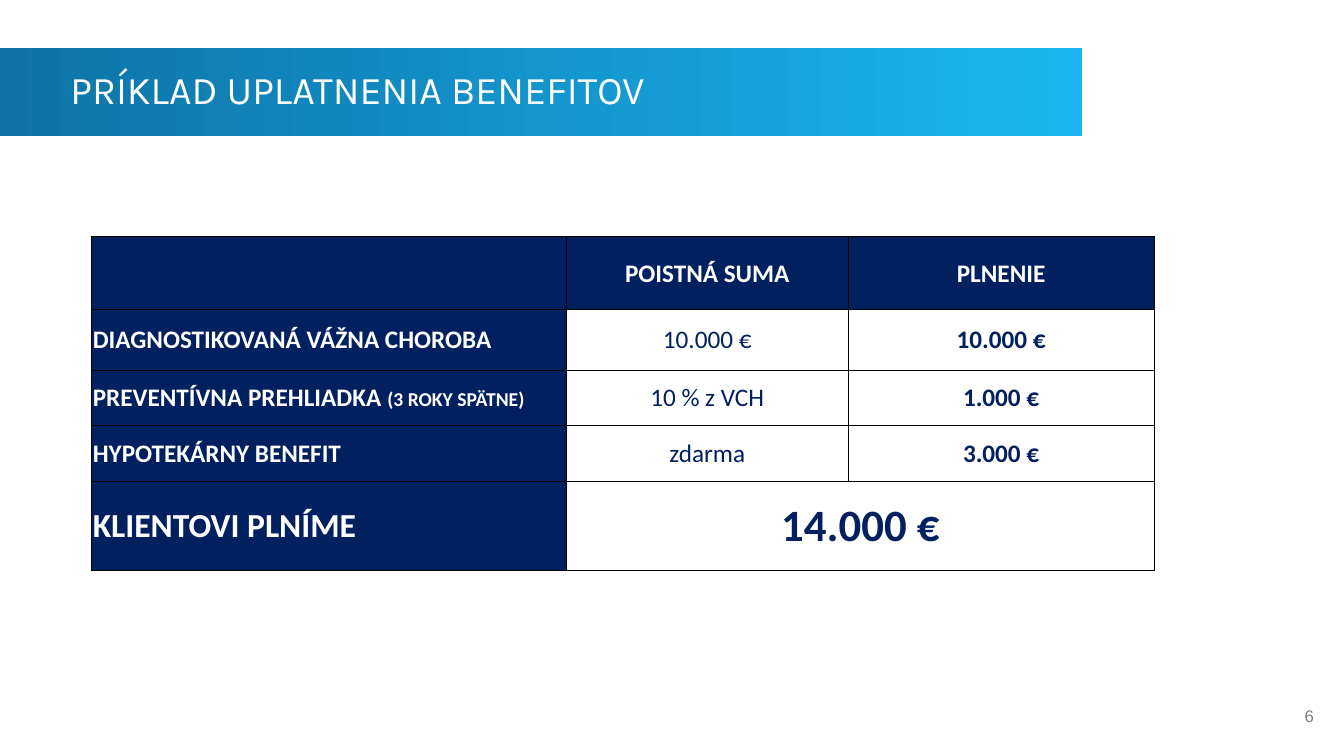
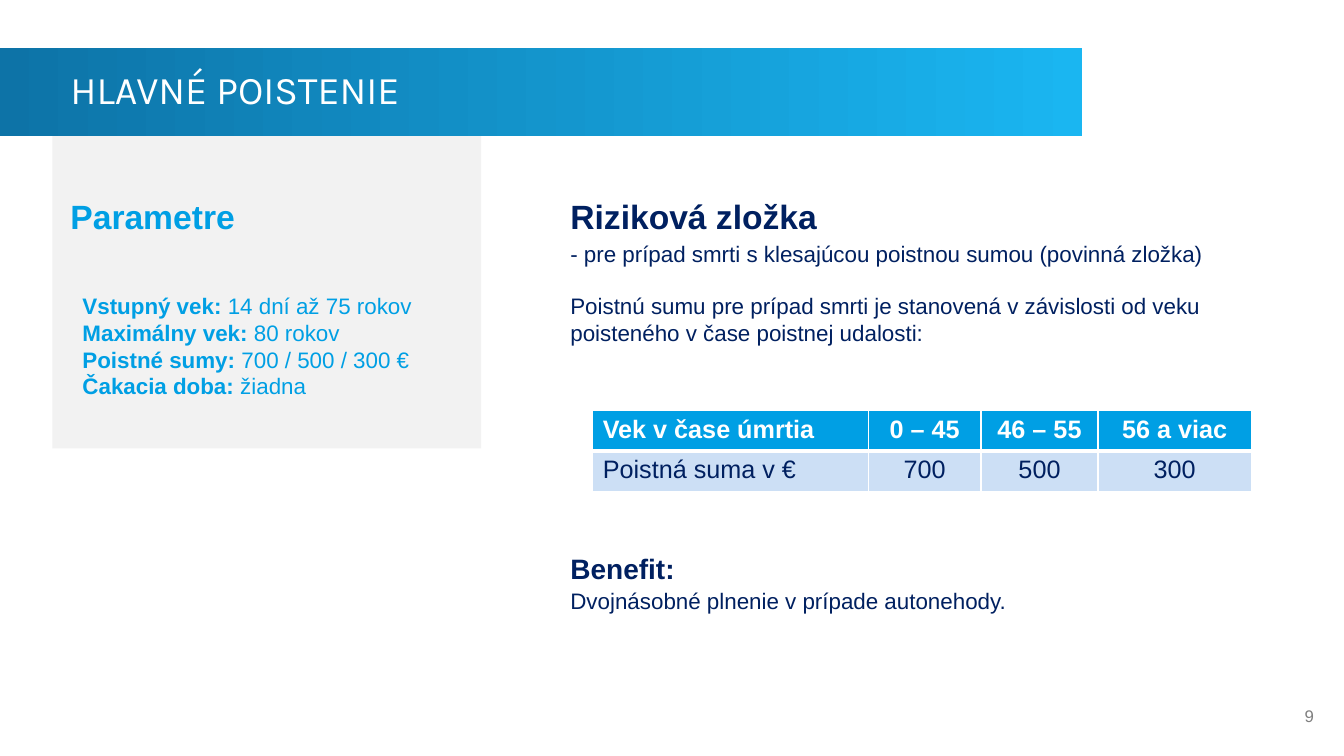
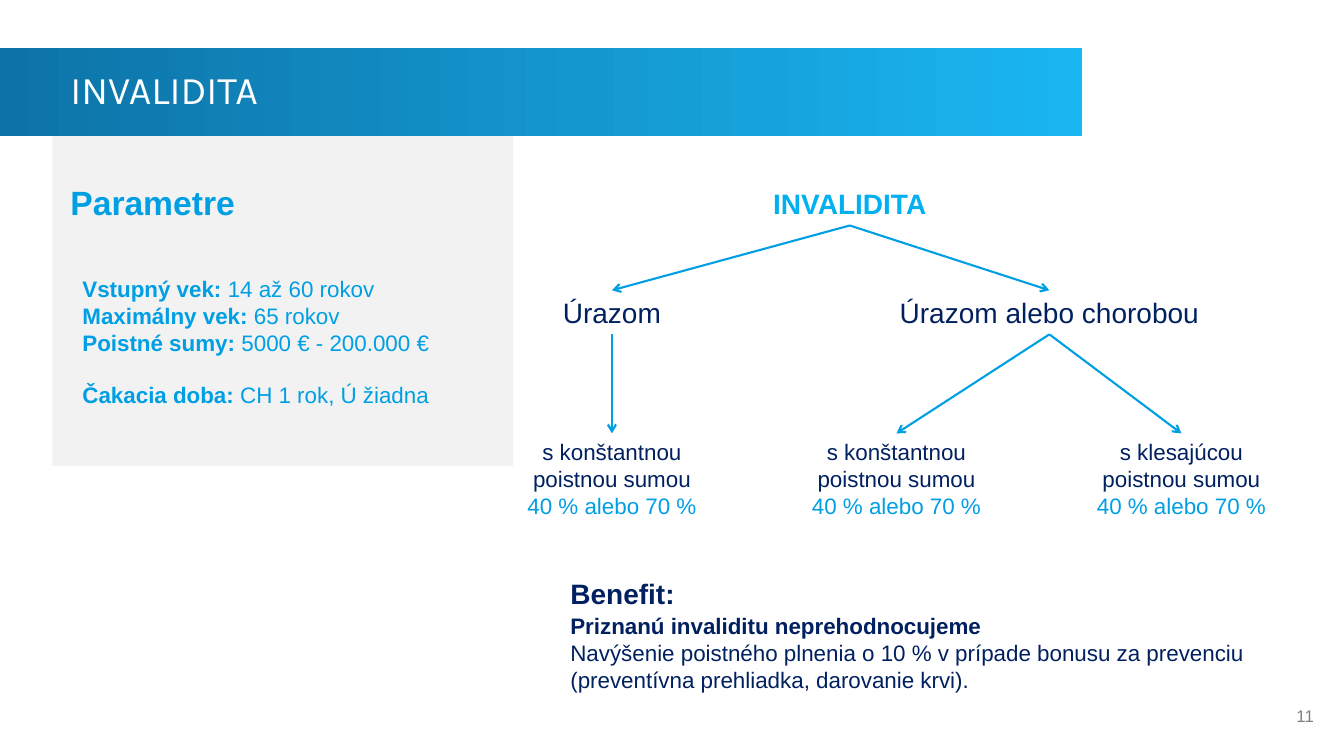
"""Build three slides on insurance benefits, main cover and disability."""
from dataclasses import dataclass
from typing import Optional

from pptx import Presentation
from pptx import util as u
from pptx.dml.color import RGBColor
from pptx.enum import shapes, text
from pptx.oxml import parse_xml
from pptx.oxml.ns import nsdecls, qn

WHITE = RGBColor(0xFF, 0xFF, 0xFF)
BLACK = RGBColor(0x00, 0x00, 0x00)
NAVY = RGBColor(0x00, 0x20, 0x60)
BLUE = RGBColor(0x00, 0x9F, 0xE4)
BRIGHT = RGBColor(0x00, 0xB0, 0xF0)
PALE_BLUE = RGBColor(0xCC, 0xDF, 0xF5)
PANEL_GRAY = RGBColor(0xF2, 0xF2, 0xF2)
NUMBER_GRAY = RGBColor(0x80, 0x80, 0x80)
BAND_START = RGBColor(0x0D, 0x73, 0xA7)
BAND_END = RGBColor(0x1A, 0xB6, 0xF1)

WIDTH, HEIGHT = u.Inches(13.33), u.Inches(7.5)
LEFT, CENTER, RIGHT = text.PP_ALIGN.LEFT, text.PP_ALIGN.CENTER, text.PP_ALIGN.RIGHT
TOP, MIDDLE = text.MSO_ANCHOR.TOP, text.MSO_ANCHOR.MIDDLE
BLANK_LAYOUT = 6
BODY_SIZE = 16
BODY_LINE = 18.4
CONTENT_COL = 41.7
CONTENT_COLS = 56
HEADING_ROWS = 6
NODE_ROWS = 5.83


def across(columns: float) -> u.Emu:
    """Turn columns (hundredths of the slide width) into a length."""
    return u.Emu(round(WIDTH * columns / 100))


def down(rows: float) -> u.Emu:
    """Turn rows (hundredths of the slide height) into a length."""
    return u.Emu(round(HEIGHT * rows / 100))


@dataclass(frozen=True)
class Area:
    """A rectangle in grid columns and rows."""
    col: float
    row: float
    cols: float
    rows: float

    def place(self) -> tuple:
        """Return left, top, width and height."""
        return across(self.col), down(self.row), across(self.cols), down(self.rows)


@dataclass(frozen=True)
class Span:
    """A run of text with what sets it apart from its paragraph."""
    words: str
    bold: Optional[bool] = None
    size: Optional[float] = None


@dataclass(frozen=True)
class Para:
    """A paragraph with one common style."""
    spans: tuple
    size: float = BODY_SIZE
    color: RGBColor = NAVY
    bold: Optional[bool] = False
    align: text.PP_ALIGN = LEFT
    font: str = "Arial"
    before: float = 0
    spacing: float = 1.0


@dataclass(frozen=True)
class Cell:
    """A table cell with its paragraph and fill."""
    para: Optional[Para]
    fill: RGBColor


@dataclass(frozen=True)
class Grid:
    """A table with the line weight of every column and row edge."""
    area: Area
    cols: tuple
    rows: tuple
    cells: tuple
    col_edges: tuple
    row_edges: tuple
    edge_color: RGBColor
    insets: tuple


@dataclass(frozen=True)
class Node:
    """A tree label centred on a column, below its parent."""
    paras: tuple
    center: float
    row: float
    cols: float
    rows: float
    parent: Optional["Node"] = None


def plain(words: str, **style) -> Para:
    """Make a paragraph of one span."""
    return Para((Span(words),), **style)


def heading(words: str, size: float = 24, color: RGBColor = NAVY,
            font: str = "Arial", bold: bool = True) -> Para:
    """Make a heading paragraph."""
    return plain(words, size=size, color=color, bold=bold, font=font, before=10, spacing=0.9)


def parameter(label: str, value: str, before: float = 0) -> Para:
    """Make a paragraph with a bold label and its value."""
    return Para((Span(label + " ", True), Span(value, False)),
                color=BLUE, bold=None, before=before)


def write(frame, paras: tuple) -> None:
    """Fill a text frame with paragraphs."""
    for index, para in enumerate(paras):
        paragraph = frame.add_paragraph() if index else frame.paragraphs[0]
        paragraph.alignment = para.align
        paragraph.space_before = u.Pt(para.before)
        paragraph.line_spacing = para.spacing
        font = paragraph.font
        font.name, font.size, font.bold = para.font, u.Pt(para.size), para.bold
        font.color.rgb = para.color
        for span in para.spans:
            run = paragraph.add_run()
            run.text = span.words
            if span.bold is not None:
                run.font.bold = span.bold
            if span.size is not None:
                run.font.size = u.Pt(span.size)


def draw_text(page, area: Area, paras: tuple, anchor: text.MSO_ANCHOR = TOP) -> None:
    """Add a wrapped text box."""
    frame = page.shapes.add_textbox(*area.place()).text_frame
    frame.word_wrap = True
    frame.vertical_anchor = anchor
    write(frame, paras)


def draw_box(page, area: Area):
    """Add a rectangle without line or shadow."""
    box = page.shapes.add_shape(shapes.MSO_SHAPE.RECTANGLE, *area.place())
    box.shadow.inherit = False
    box.line.fill.background()
    return box


def draw_arrow(page, start: tuple, end: tuple) -> None:
    """Add an arrow between two grid points."""
    arrow = page.shapes.add_connector(
        shapes.MSO_CONNECTOR.STRAIGHT,
        across(start[0]), down(start[1]), across(end[0]), down(end[1]))
    arrow.line.color.rgb = BLUE
    arrow.line.width = u.Pt(1.5)
    properties = arrow.element.spPr
    properties.find(qn("a:ln")).append(parse_xml(f'<a:tailEnd {nsdecls("a")} type="arrow"/>'))
    properties.append(parse_xml(f'<a:effectLst {nsdecls("a")}/>'))


def draw_edges(cell, weights: dict, color: RGBColor) -> None:
    """Set the borders of a table cell."""
    properties = cell._tc.get_or_add_tcPr()
    for index, (side, weight) in enumerate(weights.items()):
        properties.insert(index, parse_xml(
            f'<a:ln{side} {nsdecls("a")} w="{u.Pt(weight)}"><a:solidFill>'
            f'<a:srgbClr val="{color}"/></a:solidFill></a:ln{side}>'))


def draw_table(page, grid: Grid):
    """Add a table and return it."""
    table = page.shapes.add_table(len(grid.rows), len(grid.cols), *grid.area.place()).table
    table.first_row = table.horz_banding = False
    for column, cols in zip(table.columns, grid.cols):
        column.width = across(cols)
    for row, rows in zip(table.rows, grid.rows):
        row.height = down(rows)
    for r, row in enumerate(grid.cells):
        for c, content in enumerate(row):
            cell = table.cell(r, c)
            cell.fill.solid()
            cell.fill.fore_color.rgb = content.fill
            (cell.margin_left, cell.margin_top,
             cell.margin_right, cell.margin_bottom) = map(u.Inches, grid.insets)
            if content.para:
                write(cell.text_frame, (content.para,))
            draw_edges(cell, {"L": grid.col_edges[c], "R": grid.col_edges[c + 1],
                              "T": grid.row_edges[r], "B": grid.row_edges[r + 1]},
                       grid.edge_color)
    return table


def draw_node(page, node: Node) -> None:
    """Add a tree label and the arrow from its parent."""
    area = Area(node.center - node.cols / 2, node.row, node.cols, node.rows)
    draw_text(page, area, node.paras)
    if node.parent:
        start = node.parent.center, node.parent.row + node.parent.rows
        draw_arrow(page, start, (node.center, node.row))


def start_page(deck, title: str, number: int):
    """Add a page with its title band and number."""
    page = deck.slides.add_slide(deck.slide_layouts[BLANK_LAYOUT])
    band = draw_box(page, Area(0, 6.4, 80.5, 11.6))
    band.fill.gradient()
    band.fill.gradient_angle = 0
    for stop, color, position in zip(band.fill.gradient_stops, (BAND_START, BAND_END), (0, 1)):
        stop.color.rgb = color
        stop.position = position
    draw_text(page, Area(4.5, 6.4, 74.7, 11.5),
              (heading(title, 28, WHITE, "Karla", False),), MIDDLE)
    draw_text(page, Area(76, 92, 22.5, 5.33),
              (plain(str(number), size=12, color=NUMBER_GRAY, align=RIGHT),), MIDDLE)
    return page


def draw_parameters(page, panel: Area, title_row: float, listing: Area, paras: tuple) -> None:
    """Add the gray panel with its parameters."""
    box = draw_box(page, panel)
    box.fill.solid()
    box.fill.fore_color.rgb = PANEL_GRAY
    draw_text(page, Area(4.5, title_row, 27.8, HEADING_ROWS), (heading("Parametre", color=BLUE),))
    draw_text(page, listing, paras, MIDDLE)


def draw_benefit(page, row: float, paras: tuple) -> None:
    """Add the benefit heading and its text."""
    draw_text(page, Area(CONTENT_COL, row, CONTENT_COLS, HEADING_ROWS), (heading("Benefit:", 20),))
    draw_text(page, Area(CONTENT_COL, row + 4.2, CONTENT_COLS, 8.4), paras)


def build_example(deck) -> None:
    """Build the page with the worked example."""
    page = start_page(deck, "PRÍKLAD UPLATNENIA BENEFITOV", 6)

    def label(*spans: Span, size: float = 18, align: text.PP_ALIGN = LEFT) -> Cell:
        """Make a white-on-navy cell."""
        return Cell(Para(spans, size, WHITE, True, align, "Calibri"), NAVY)

    def amount(words: str, bold: bool = True, size: float = 18) -> Cell:
        """Make a navy-on-white cell."""
        return Cell(plain(words, size=size, bold=bold, align=CENTER, font="Calibri"), WHITE)

    cells = (
        (Cell(None, NAVY), label(Span("POISTNÁ SUMA"), align=CENTER),
         label(Span("PLNENIE"), align=CENTER)),
        (label(Span("DIAGNOSTIKOVANÁ VÁŽNA CHOROBA")),
         amount("10.000 €", False), amount("10.000 €")),
        (label(Span("PREVENTÍVNA PREHLIADKA "), Span("(3 ROKY SPÄTNE)", size=14)),
         amount("10 % z VCH", False), amount("1.000 €")),
        (label(Span("HYPOTEKÁRNY BENEFIT")), amount("zdarma", False), amount("3.000 €")),
        (label(Span("KLIENTOVI PLNÍME"), size=24), amount("14.000 €", size=32),
         Cell(None, WHITE)),
    )
    table = draw_table(page, Grid(
        Area(6.83, 31.33, 79.05, 44), (35.33, 20.93, 22.8), (9.6, 8, 7.4, 7.4, 11.73), cells,
        (1, 1, 0.5, 1), (1, 1, 0.5, 0.5, 0.5, 1), BLACK, (0.01, 0.01, 0.01, 0)))
    table.cell(4, 1).merge(table.cell(4, 2))
    for row in range(len(cells)):
        for column in range(len(cells[row])):
            table.cell(row, column).vertical_anchor = MIDDLE


def build_main_cover(deck) -> None:
    """Build the page on the main cover."""
    page = start_page(deck, "HLAVNÉ POISTENIE", 9)
    draw_parameters(page, Area(3.9, 18, 31.9, 41.33), 25.87, Area(5.4, 32.13, 27.8, 27.2), (
        parameter("Vstupný vek:", "14 dní až 75 rokov"),
        parameter("Maximálny vek:", "80 rokov"),
        parameter("Poistné sumy:", "700 / 500 / 300 €"),
        parameter("Čakacia doba:", "žiadna"),
    ))
    draw_text(page, Area(CONTENT_COL, 25.87, CONTENT_COLS, HEADING_ROWS),
              (heading("Riziková zložka"),))
    draw_text(page, Area(CONTENT_COL, 31.07, 51.4, 14.67), (
        plain("- pre prípad smrti s klesajúcou poistnou sumou (povinná zložka)"),
        plain("Poistnú sumu pre prípad smrti je stanovená v závislosti od veku "
              "poisteného v čase poistnej udalosti:", before=BODY_LINE),
    ))
    rows = (("Vek v čase úmrtia", "0 – 45", "46 – 55", "56 a viac"),
            ("Poistná suma v €", "700", "500", "300"))
    looks = ((WHITE, True, BLUE), (NAVY, False, PALE_BLUE))
    cells = tuple(
        tuple(Cell(plain(words, size=18, color=color, bold=bold,
                         align=CENTER if column else LEFT), fill)
              for column, words in enumerate(row))
        for row, (color, bold, fill) in zip(rows, looks))
    draw_table(page, Grid(
        Area(44.1, 54.27, 49, 10.8), (20.5, 8.4, 8.7, 11.4), (5.4, 5.4), cells,
        (1, 1, 1, 1, 1), (1, 3, 1), WHITE, (0.1, 0.05, 0.1, 0.05)))
    draw_benefit(page, 72.8, (plain("Dvojnásobné plnenie v prípade autonehody."),))


def build_disability(deck) -> None:
    """Build the page on disability."""
    page = start_page(deck, "INVALIDITA", 11)
    draw_parameters(page, Area(3.9, 18, 34.28, 43.6), 24, Area(5.4, 30.93, 33.7, 28.53), (
        parameter("Vstupný vek:", "14 až 60 rokov"),
        parameter("Maximálny vek:", "65 rokov"),
        parameter("Poistné sumy:", "5000 € - 200.000 €"),
        parameter("Čakacia doba:", "CH 1 rok, Ú žiadna", BODY_LINE),
    ))
    root = Node((plain("INVALIDITA", size=20, color=BRIGHT, bold=True, align=CENTER),),
                63.23, 24, 17.1, NODE_ROWS)
    injury, illness = (
        Node((plain(words, size=20, align=CENTER),), center, 38.4, cols, NODE_ROWS, root)
        for words, center, cols in (("Úrazom", 45.53, 17.1),
                                    ("Úrazom alebo chorobou", 78.08, 34.35)))
    leaves = tuple(
        Node((plain(words, align=CENTER), plain("poistnou sumou", align=CENTER),
              plain("40 % alebo 70 %", color=BLUE, align=CENTER)),
             center, 57.33, 17.85, 12.13, parent)
        for words, center, parent in (("s konštantnou", 45.53, injury),
                                      ("s konštantnou", 66.7, illness),
                                      ("s klesajúcou", 87.9, illness)))
    for node in (root, injury, illness, *leaves):
        draw_node(page, node)
    draw_benefit(page, 76.13, (
        plain("Priznanú invaliditu neprehodnocujeme", bold=True),
        plain("Navýšenie poistného plnenia o 10 % v prípade bonusu za prevenciu "
              "(preventívna prehliadka, darovanie krvi)."),
    ))


def main() -> None:
    """Build and save the deck."""
    deck = Presentation()
    deck.slide_width, deck.slide_height = WIDTH, HEIGHT
    build_example(deck)
    build_main_cover(deck)
    build_disability(deck)
    deck.save("out.pptx")


if __name__ == "__main__":
    main()
